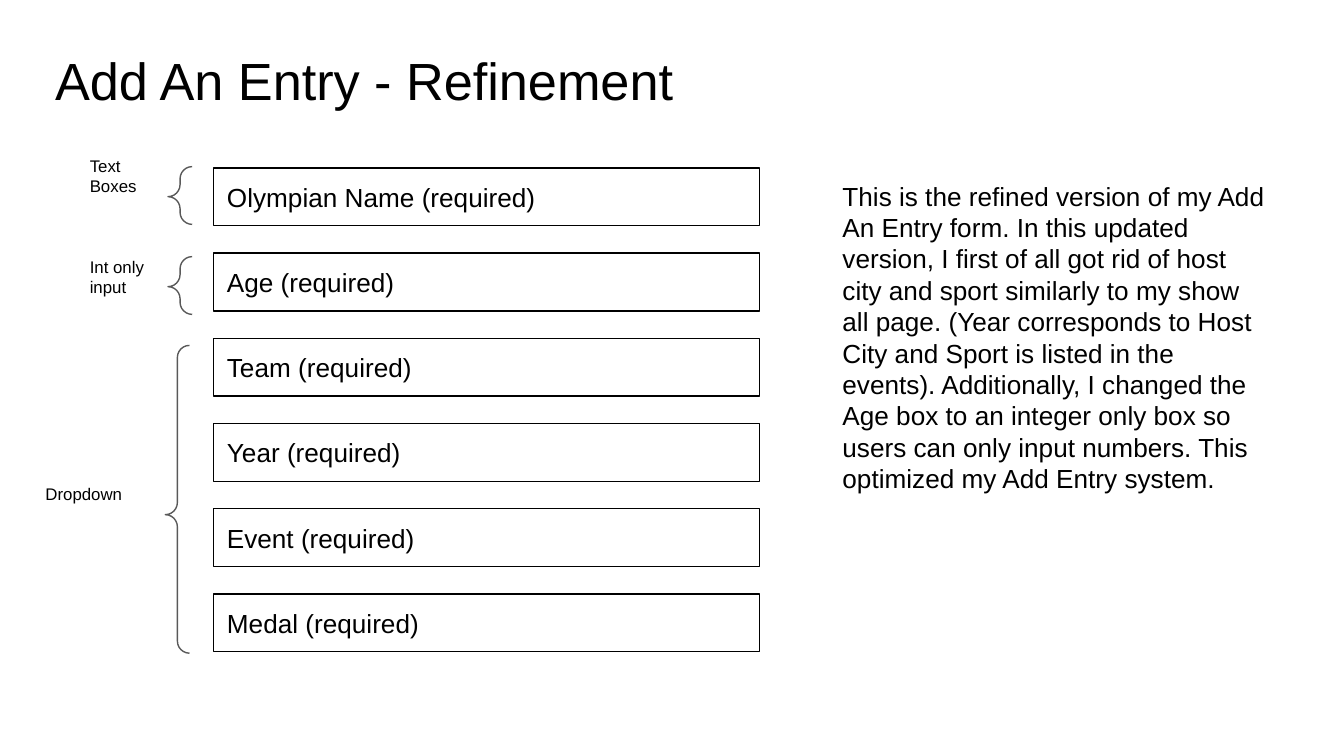
from pptx import Presentation
from pptx.dml.color import RGBColor
from pptx.enum.shapes import MSO_SHAPE
from pptx.enum.text import MSO_ANCHOR, MSO_AUTO_SIZE, PP_ALIGN
from pptx.util import Inches, Pt

RECTANGLE = MSO_SHAPE.RECTANGLE
LEFT_BRACE = MSO_SHAPE.LEFT_BRACE
TOP, MIDDLE = MSO_ANCHOR.TOP, MSO_ANCHOR.MIDDLE
LEFT = PP_ALIGN.LEFT
NO_AUTOFIT = MSO_AUTO_SIZE.NONE

COLORS = {"text": "000000", "field": "FFFFFF", "brace": "595959"}
FONT = "Arial"
TITLE_ONLY = 5

FIELDS = ["Olympian Name", "Age", "Team", "Year", "Event", "Medal"]
FIRST_TOP, LAST_TOP = 1.25, 4.42
FIELD_STEP = (LAST_TOP - FIRST_TOP) / (len(FIELDS) - 1)

# Label text, label position and size, brace position and size, brace point
GROUPS = [
    ("Text Boxes", (0.57, 1.06, 0.77, 0.43), (1.25, 1.24, 0.18, 0.43), 0.52),
    ("Dropdown", (0.24, 3.5, 1.1, 0.43), (1.23, 2.57, 0.18, 2.29), 0.55),
    ("Int only input", (0.57, 1.81, 0.77, 0.43), (1.25, 1.91, 0.18, 0.43), 0.52),
]

EXPLANATION = (
    "This is the refined version of my Add An Entry form. In this updated "
    "version, I first of all got rid of host city and sport similarly to my "
    "show all page. (Year corresponds to Host City and Sport is listed in the "
    "events). Additionally, I changed the Age box to an integer only box so "
    "users can only input numbers. This optimized my Add Entry system."
)


def color(name):
    return RGBColor.from_string(COLORS[name])


def inches(box):
    return [Inches(value) for value in box]


def write_text(shape, text, size, anchor=TOP):
    frame = shape.text_frame
    frame.text = text
    frame.word_wrap = True
    frame.auto_size = NO_AUTOFIT
    frame.vertical_anchor = anchor
    frame.margin_left = frame.margin_right = Inches(0.1)
    frame.margin_top = frame.margin_bottom = Inches(0.1)
    para = frame.paragraphs[0]
    para.alignment = LEFT
    para.font.name = FONT
    para.font.size = Pt(size)
    para.font.color.rgb = color("text")


def set_title(slide, text, box):
    title = slide.shapes.title
    title.left, title.top, title.width, title.height = inches(box)
    write_text(title, text, 28)


def add_text(slide, text, box, size):
    write_text(slide.shapes.add_textbox(*inches(box)), text, size)


def add_outlined_shape(slide, kind, box, line_color):
    shape = slide.shapes.add_shape(kind, *inches(box))
    shape.shadow.inherit = False
    shape.line.color.rgb = color(line_color)
    shape.line.width = Pt(0.75)
    return shape


def add_field(slide, name, top):
    field = add_outlined_shape(slide, RECTANGLE, (1.59, top, 4.06, 0.43), "text")
    field.fill.solid()
    field.fill.fore_color.rgb = color("field")
    write_text(field, f"{name} (required)", 14, MIDDLE)


def add_brace(slide, box, point):
    """Add a left brace whose tip sits at the given share of its height."""
    brace = add_outlined_shape(slide, LEFT_BRACE, box, "brace")
    brace.fill.background()
    brace.adjustments[0] = 0.5
    brace.adjustments[1] = point


def main():
    deck = Presentation()
    deck.slide_width = Inches(10)
    deck.slide_height = deck.slide_width * 9 // 16
    slide = deck.slides.add_slide(deck.slide_layouts[TITLE_ONLY])

    set_title(slide, "Add An Entry - Refinement", (0.31, 0.26, 4.86, 0.63))
    for row, name in enumerate(FIELDS):
        add_field(slide, name, FIRST_TOP + row * FIELD_STEP)
    add_text(slide, EXPLANATION, (6.17, 1.24, 3.37, 4.13), 14)
    for label, label_box, brace_box, point in GROUPS:
        add_brace(slide, brace_box, point)
        add_text(slide, label, label_box, 9)

    deck.save("out.pptx")


if __name__ == "__main__":
    main()
